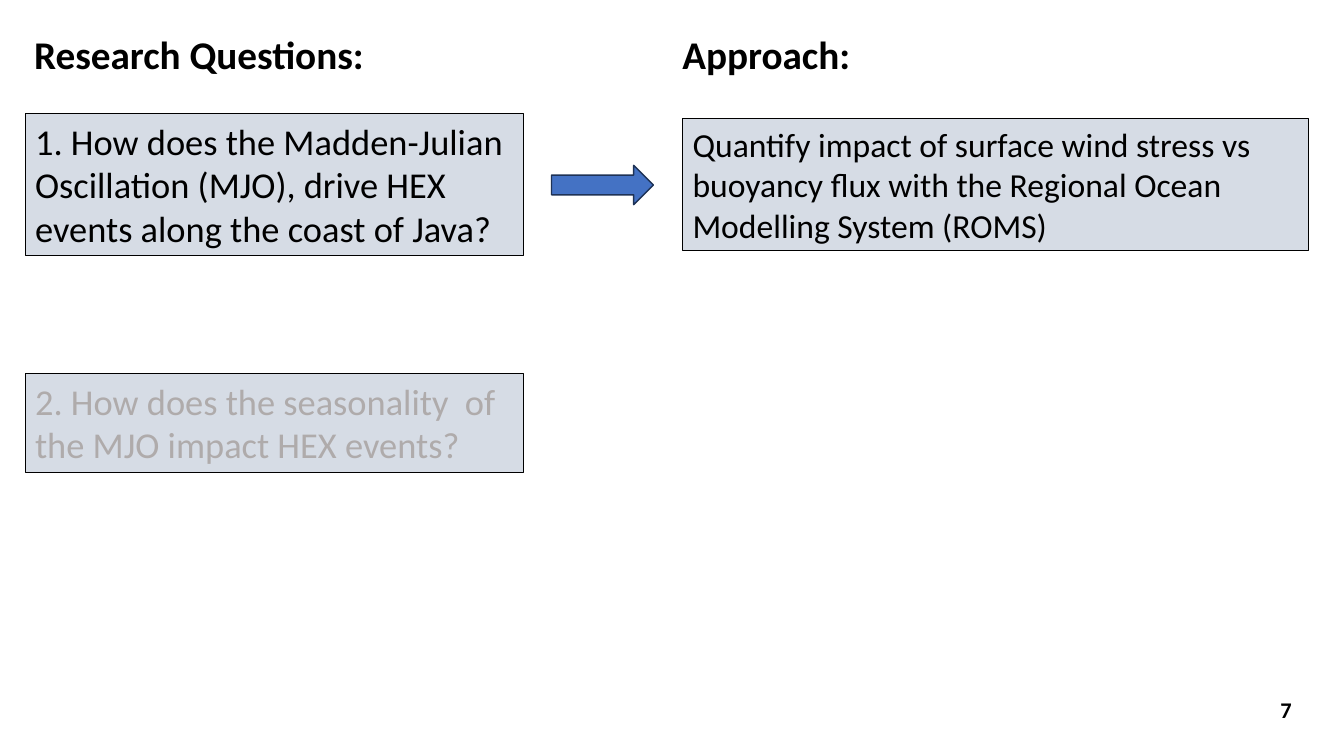
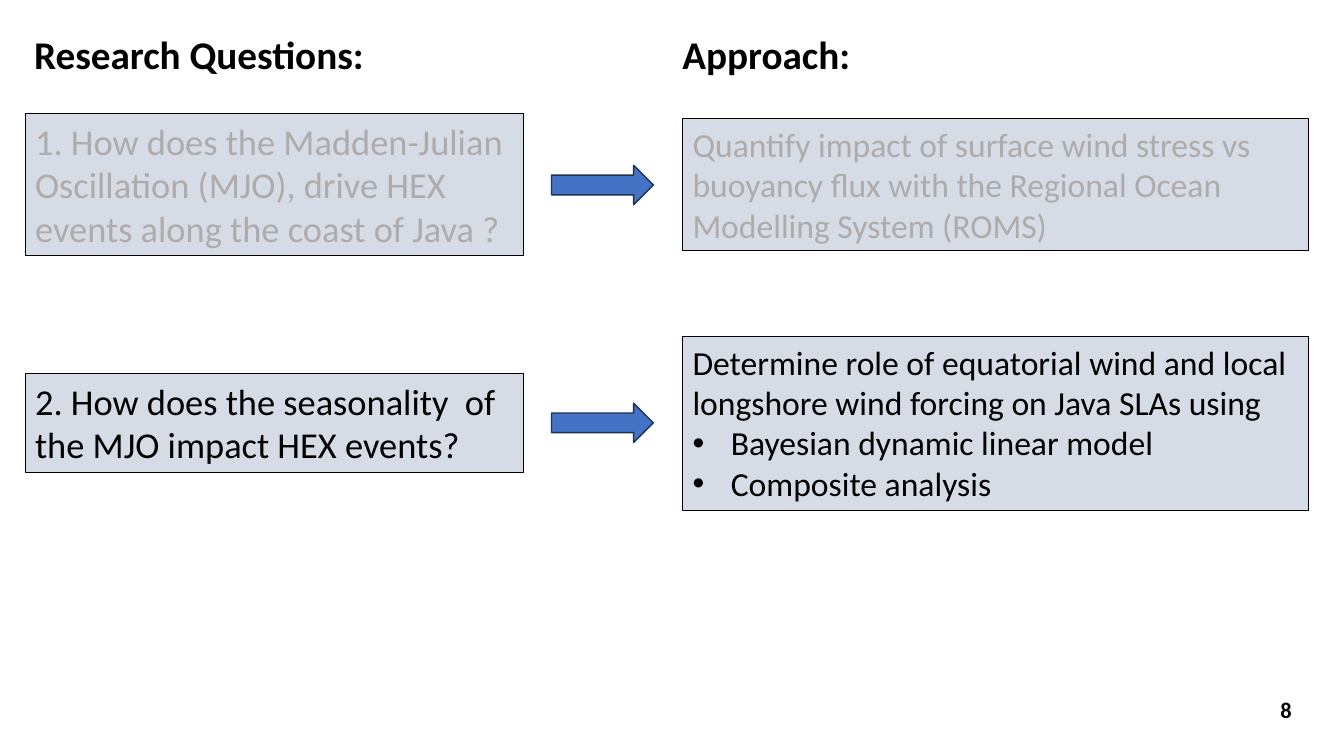
import pptx
import pptx.dml.color
import pptx.enum.shapes
import pptx.enum.text
import pptx.oxml.ns
import pptx.util
from lxml import etree

PX = 9144  # 100 px to the inch
FONT = "Calibri"
BLACK, FADED = "000000", "AFABAB"
PANEL, ARROW, ARROW_EDGE = "D6DCE5", "4472C4", "1E3256"

# Columns as (left, width), and the centre line of each row
QUESTION_COLUMN, ARROW_COLUMN, APPROACH_COLUMN = (25, 494), (547, 101), (677, 621)
ROW_CENTRES = (184, 420)
ARROW_HEIGHT = 39
BULLET = "• "
BULLET_INDENT = 38


def px(length):
    return pptx.util.Emu(length * PX)


def colour(value):
    return pptx.dml.color.RGBColor.from_string(value)


def paint(shape, fill, line, weight):
    shape.fill.solid()
    shape.fill.fore_color.rgb = colour(fill)
    shape.line.color.rgb = colour(line)
    shape.line.width = pptx.util.Pt(weight)


def add_bullet(para):
    properties = para._p.get_or_add_pPr()
    properties.set("marL", str(px(BULLET_INDENT)))
    properties.set("indent", str(-px(BULLET_INDENT)))
    for tag, name, value in (("a:buFont", "typeface", "Arial"), ("a:buChar", "char", "•")):
        etree.SubElement(properties, pptx.oxml.ns.qn(tag)).set(name, value)


def add_text(page, area, lines, size, ink=BLACK, bold=False):
    """Place lines of text; a line that starts with BULLET becomes a list item."""
    box = page.shapes.add_textbox(*map(px, area))
    frame = box.text_frame
    frame.word_wrap = True
    for index, line in enumerate(lines):
        para = frame.paragraphs[0] if index == 0 else frame.add_paragraph()
        if line.startswith(BULLET):
            add_bullet(para)
        span = para.add_run()
        span.text = line.removeprefix(BULLET)
        span.font.name = FONT
        span.font.size = pptx.util.Pt(size)
        span.font.bold = bold
        span.font.color.rgb = colour(ink)
    return box


def centred_area(column, centre, height):
    left, width = column
    return left, centre - (height + 1) // 2, width, height


def add_panel(page, column, centre, height, lines, size, ink):
    box = add_text(page, centred_area(column, centre, height), lines, size, ink)
    box.text_frame.auto_size = pptx.enum.text.MSO_AUTO_SIZE.SHAPE_TO_FIT_TEXT
    paint(box, PANEL, BLACK, 0.75)


def add_arrow(page, centre):
    area = centred_area(ARROW_COLUMN, centre, ARROW_HEIGHT)
    arrow = page.shapes.add_shape(pptx.enum.shapes.MSO_SHAPE.RIGHT_ARROW, *map(px, area))
    arrow.shadow.inherit = False
    paint(arrow, ARROW, ARROW_EDGE, 1)


def add_row(page, centre, question, approach, ink):
    """A question and, where there is one, the arrow to its approach."""
    height, text = question
    add_panel(page, QUESTION_COLUMN, centre, height, [text], 26, ink)
    if approach:
        height, lines = approach
        add_arrow(page, centre)
        add_panel(page, APPROACH_COLUMN, centre, height, lines, 24, ink)


def add_frame(page, number):
    """Column headings and page number."""
    add_text(page, (24, 25, 600, 57), ["Research Questions:"], 28, bold=True)
    add_text(page, (667, 25, 643, 57), ["Approach:"], 28, bold=True)
    footer = add_text(page, (991, 684, 300, 40), [str(number)], 16, bold=True)
    footer.text_frame.vertical_anchor = pptx.enum.text.MSO_ANCHOR.MIDDLE
    footer.text_frame.paragraphs[0].alignment = pptx.enum.text.PP_ALIGN.RIGHT


def add_page(deck, number, rows):
    page = deck.slides.add_slide(deck.slide_layouts[6])
    add_frame(page, number)
    for centre, row in zip(ROW_CENTRES, rows):
        add_row(page, centre, *row)


def main():
    deck = pptx.Presentation()
    deck.slide_width, deck.slide_height = px(1333), px(750)

    # Panel heights with their wording
    drive = "1. How does the Madden-Julian Oscillation (MJO), drive HEX events along the coast of Java"
    season = (98, "2. How does the seasonality  of the MJO impact HEX events?")
    modelling = (131, ["Quantify impact of surface wind stress vs buoyancy flux "
                       "with the Regional Ocean Modelling System (ROMS)"])
    statistics = (172, ["Determine role of equatorial wind and local longshore wind "
                        "forcing on Java SLAs using",
                        BULLET + "Bayesian dynamic linear model",
                        BULLET + "Composite analysis"])

    add_page(deck, 7, [((141, drive + "?"), modelling, BLACK),
                       (season, None, FADED)])
    add_page(deck, 8, [((141, drive + " ?"), modelling, FADED),
                       (season, statistics, BLACK)])
    deck.save("out.pptx")


if __name__ == "__main__":
    main()
